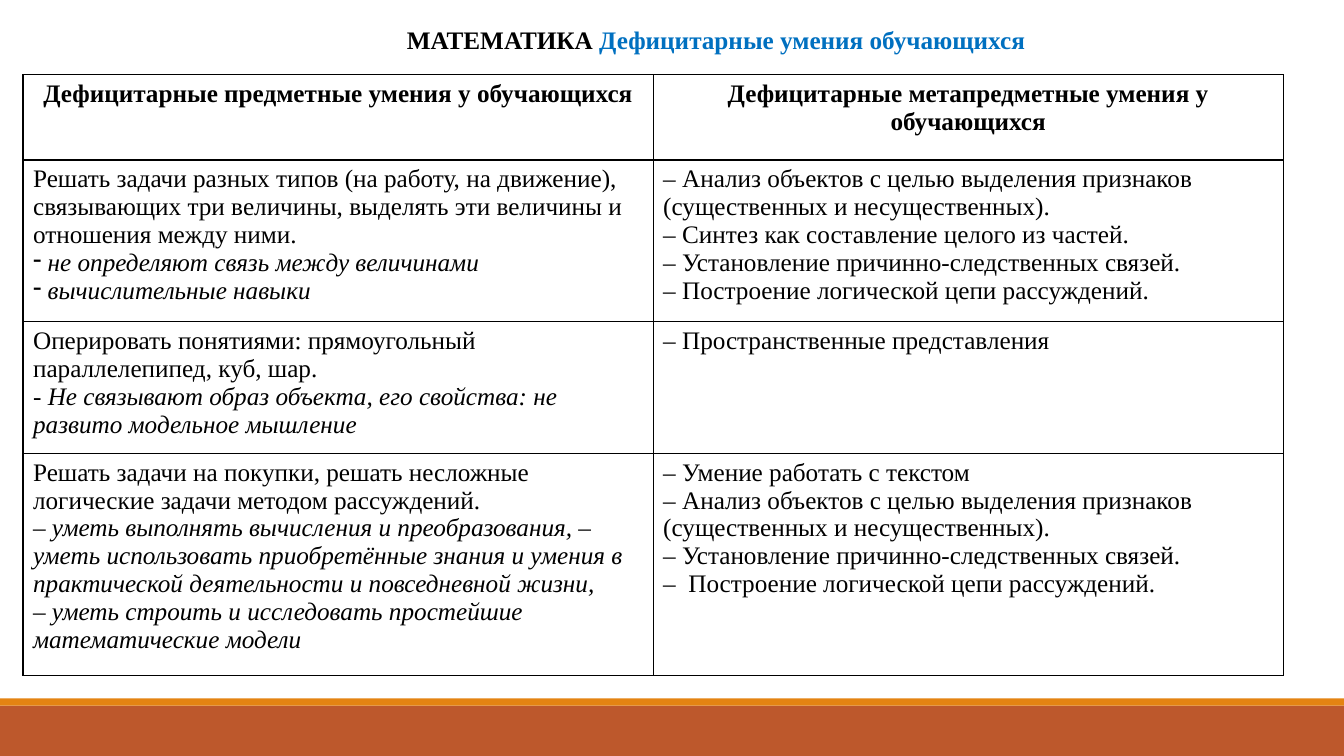
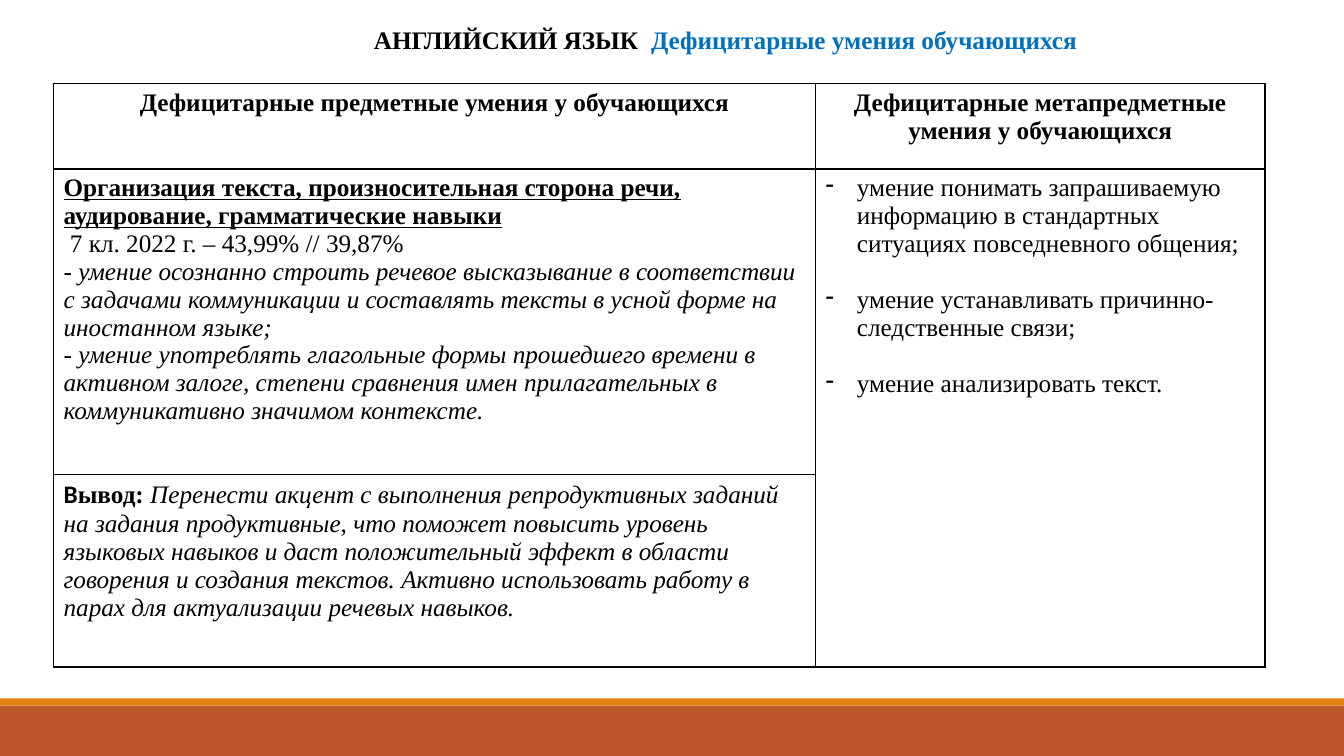
from lxml.etree import SubElement
from pptx import Presentation
from pptx.dml.color import RGBColor
from pptx.enum.shapes import MSO_SHAPE
from pptx.enum.text import MSO_ANCHOR, MSO_AUTO_SIZE, PP_ALIGN
from pptx.oxml import parse_xml
from pptx.oxml.ns import nsdecls, qn
from pptx.util import Cm, Pt

BLACK = RGBColor(0x00, 0x00, 0x00)
BLUE = RGBColor(0x00, 0x70, 0xC0)
RUST = RGBColor(0xBD, 0x58, 0x2C)
ORANGE = RGBColor(0xE4, 0x83, 0x12)
FONT = "Times New Roman"

BOLD = {"bold": True}
ITALIC = {"italic": True}
HEADING = {"bold": True, "align": PP_ALIGN.CENTER}
INLINE_DASH = {"italic": True, "bullet_indent": Cm(0)}
HANGING_DASH = {"bullet_indent": Cm(0.79)}
SPACED_DASH = {"bullet_indent": Cm(0.79), "space_before": Pt(20)}


def write(paragraph, text, bold=False, italic=False, underline=False, color=BLACK,
          font=FONT, align=PP_ALIGN.LEFT, bullet_indent=None, space_before=Pt(0)):
    """Add one formatted run and set the layout of its paragraph."""
    run = paragraph.add_run()
    run.text = text
    run.font.name = font
    run.font.size = Pt(18)
    run.font.bold = bold
    run.font.italic = italic
    run.font.underline = underline
    run.font.color.rgb = color
    paragraph.alignment = align
    paragraph.space_before = space_before
    if bullet_indent is not None:
        properties = paragraph._p.get_or_add_pPr()
        properties.set("marL", str(bullet_indent))
        properties.set("indent", str(-bullet_indent))
        SubElement(properties, qn("a:buChar")).set("char", "-")


def add_borders(cell):
    """Draw a thin black line on all four sides of a cell."""
    properties = cell._tc.get_or_add_tcPr()
    for index, side in enumerate(("lnL", "lnR", "lnT", "lnB")):
        properties.insert(index, parse_xml(
            f'<a:{side} {nsdecls("a")} w="{Pt(1)}"><a:solidFill>'
            f'<a:srgbClr val="{BLACK}"/></a:solidFill></a:{side}>'))


# Each cell is a list of paragraphs, each paragraph a list of (text, format) runs
HEADER_ROW = [
    [[("Дефицитарные предметные умения у обучающихся", HEADING)]],
    [[("Дефицитарные метапредметные умения у обучающихся", HEADING)]],
]

MATH_ROWS = [
    HEADER_ROW,
    [
        [
            [("Решать задачи разных типов (на работу, на движение), связывающих три "
              "величины, выделять эти величины и отношения между ними.", {})],
            [(" не определяют связь между величинами", INLINE_DASH)],
            [(" вычислительные навыки", INLINE_DASH)],
        ],
        [
            [("– Анализ объектов с целью выделения признаков "
              "(существенных и несущественных).", {})],
            [("– Синтез как составление целого из частей.", {})],
            [("– Установление причинно-следственных связей.", {})],
            [("– Построение логической цепи рассуждений.", {})],
        ],
    ],
    [
        [
            [("Оперировать понятиями: прямоугольный параллелепипед, куб, шар.", {})],
            [("- Не связывают образ объекта, его свойства: "
              "не развито модельное мышление", ITALIC)],
        ],
        [[("– Пространственные представления", {})]],
    ],
    [
        [
            [("Решать задачи на покупки, решать несложные логические задачи "
              "методом рассуждений.", {})],
            [("– ", {}),
             ("уметь выполнять вычисления и преобразования, – уметь использовать "
              "приобретённые знания и умения в практической деятельности "
              "и повседневной жизни,", ITALIC)],
            [("– уметь строить и исследовать простейшие математические модели", ITALIC)],
        ],
        [
            [("– Умение работать с текстом", {})],
            [("– Анализ объектов с целью выделения признаков "
              "(существенных и несущественных).", {})],
            [("– Установление причинно-следственных связей.", {})],
            [("–  Построение логической цепи рассуждений.", {})],
        ],
    ],
]

ENGLISH_ROWS = [
    HEADER_ROW,
    [
        [
            [("Организация текста, произносительная сторона речи, аудирование, "
              "грамматические навыки", {"bold": True, "underline": True})],
            [(" 7 кл. 2022 г. – 43,99% // 39,87%", {})],
            [("- умение осознанно строить речевое высказывание в соответствии с задачами "
              "коммуникации и составлять тексты в усной форме на иностанном языке;", ITALIC)],
            [("- умение употреблять глагольные формы прошедшего времени в активном залоге, "
              "степени сравнения имен прилагательных в коммуникативно значимом контексте.",
              ITALIC)],
        ],
        [
            [("умение понимать запрашиваемую информацию в стандартных ситуациях "
              "повседневного общения;", HANGING_DASH)],
            [("умение устанавливать причинно-следственные связи;", SPACED_DASH)],
            [("умение анализировать текст.", SPACED_DASH)],
        ],
    ],
    [
        [
            [("В", {"bold": True, "font": "Calibri"}),
             ("ывод: ", BOLD),
             ("Перенести акцент с выполнения репродуктивных заданий на задания "
              "продуктивные, что поможет повысить уровень языковых навыков и даст "
              "положительный эффект в области говорения и создания текстов. Активно "
              "использовать работу в парах для актуализации речевых навыков.", ITALIC)],
        ],
        [],
    ],
]

SLIDES = [
    {
        "subject": "МАТЕМАТИКА ", "title_left": Cm(10), "title_width": Cm(16.4),
        "left": Cm(0.58), "top": Cm(1.88), "columns": [Cm(15.88), Cm(15.88)],
        "heights": [Cm(2.15), Cm(4.08), Cm(3.32), Cm(5.6)],
        "rows": MATH_ROWS, "merges": [],
    },
    {
        "subject": "АНГЛИЙСКИЙ ЯЗЫК  ", "title_left": Cm(9.17), "title_width": Cm(18.67),
        "left": Cm(1.35), "top": Cm(2.11), "columns": [Cm(19.2), Cm(11.33)],
        "heights": [Cm(2.15), Cm(7.7), Cm(4.85)],
        "rows": ENGLISH_ROWS, "merges": [((1, 1), (2, 1))],
    },
]

presentation = Presentation()
presentation.slide_width = Cm(33.87)
presentation.slide_height = Cm(19.05)
layout = presentation.slide_layouts[5]

for number, content in enumerate(SLIDES):
    slide = presentation.slides.add_slide(layout)

    # Bottom bands, moved to the layout that all slides share
    if number == 0:
        for top, height, color in ((Cm(17.78), Cm(1.27), RUST), (Cm(17.6), Cm(0.18), ORANGE)):
            band = slide.shapes.add_shape(
                MSO_SHAPE.RECTANGLE, 0, top, presentation.slide_width, height)
            band.shadow.inherit = False
            band.fill.solid()
            band.fill.fore_color.rgb = color
            band.line.fill.background()
            layout.shapes.element.append(band.element)

    # Title
    title = slide.shapes.title
    title.left, title.top = content["title_left"], Cm(0.48)
    title.width, title.height = content["title_width"], Cm(1.02)
    frame = title.text_frame
    frame.auto_size = MSO_AUTO_SIZE.NONE
    frame.word_wrap = False
    frame.vertical_anchor = MSO_ANCHOR.MIDDLE
    write(frame.paragraphs[0], content["subject"], bold=True)
    write(frame.paragraphs[0], "Дефицитарные умения обучающихся", bold=True, color=BLUE)

    # Table grid
    columns, heights, rows = content["columns"], content["heights"], content["rows"]
    table = slide.shapes.add_table(len(rows), len(columns), content["left"], content["top"],
                                   sum(columns), sum(heights)).table
    table.first_row = False
    table.horz_banding = False
    for column, width in zip(table.columns, columns):
        column.width = width
    for row, height in zip(table.rows, heights):
        row.height = height
    for first, last in content["merges"]:
        table.cell(*first).merge(table.cell(*last))

    # Table text
    for row, texts in zip(table.rows, rows):
        for cell, paragraphs in zip(row.cells, texts):
            cell.fill.background()
            add_borders(cell)
            for index, runs in enumerate(paragraphs):
                frame = cell.text_frame
                paragraph = frame.add_paragraph() if index else frame.paragraphs[0]
                for text, text_format in runs:
                    write(paragraph, text, **text_format)

presentation.save("out.pptx")
